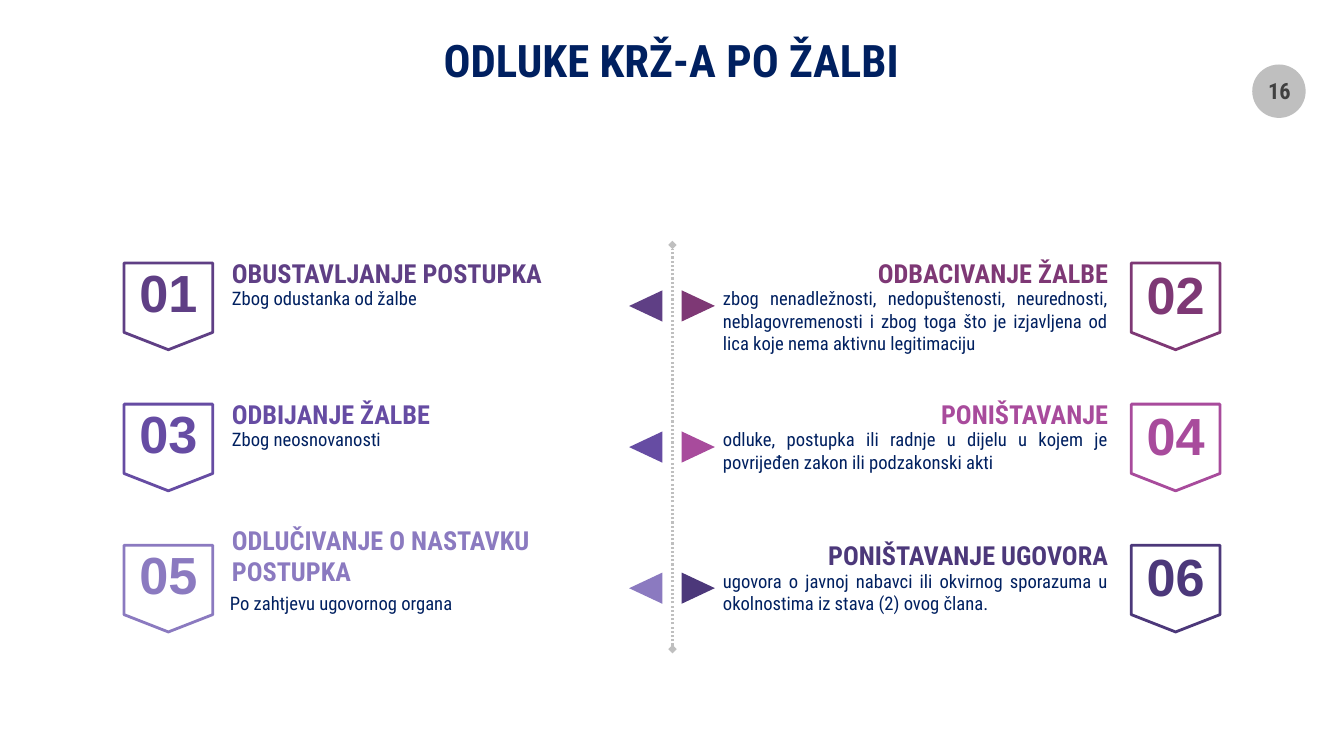
from lxml import etree
from pptx import Presentation
from pptx.dml.color import RGBColor
from pptx.enum import dml, shapes, text
from pptx.oxml.ns import qn
from pptx.util import Inches, Pt

TITLE = "ODLUKE KRŽ-A PO ŽALBI"
PAGE = "16"
NAVY = RGBColor(0x00, 0x20, 0x60)
GREY = RGBColor(0xBF, 0xBF, 0xBF)
DARK = RGBColor(0x40, 0x40, 0x40)
FONT = "Roboto Condensed"

# Heading, body, colour; items alternate between left and right
ITEMS = [
    ("OBUSTAVLJANJE POSTUPKA", "Zbog odustanka od žalbe",
     RGBColor(0x5F, 0x3F, 0x85)),
    ("ODBACIVANJE ŽALBE",
     "zbog nenadležnosti, nedopuštenosti, neurednosti, neblagovremenosti "
     "i zbog toga što je izjavljena od lica koje nema aktivnu legitimaciju",
     RGBColor(0x7E, 0x38, 0x75)),
    ("ODBIJANJE ŽALBE", "Zbog neosnovanosti", RGBColor(0x66, 0x4C, 0xA3)),
    ("PONIŠTAVANJE",
     "odluke, postupka ili radnje u dijelu u kojem je povrijeđen zakon "
     "ili podzakonski akti",
     RGBColor(0xA8, 0x4B, 0x9C)),
    ("ODLUČIVANJE O NASTAVKU\nPOSTUPKA", "Po zahtjevu ugovornog organa",
     RGBColor(0x8B, 0x7A, 0xC0)),
    ("PONIŠTAVANJE UGOVORA",
     "ugovora o javnoj nabavci ili okvirnog sporazuma u okolnostima "
     "iz stava (2) ovog člana.",
     RGBColor(0x4C, 0x38, 0x7A)),
]

TOP, STEP = 2.61, 1.4
WIDE, LINE = 3.82, 0.31
# Badge left, text left, arrow left, arrow turn, heading and body alignment
LEFT = (1.23, 2.3, 6.25, 270, text.PP_ALIGN.LEFT, text.PP_ALIGN.LEFT)
RIGHT = (11.22, 7.17, 6.77, 90, text.PP_ALIGN.RIGHT, text.PP_ALIGN.JUSTIFY)

prs = Presentation()
prs.slide_width, prs.slide_height = Inches(13.33), Inches(7.5)
slide = prs.slides.add_slide(prs.slide_layouts[6])


def write(shape, words, size, color, align, bold=True, font=FONT,
          anchor=text.MSO_ANCHOR.MIDDLE, base=0):
    frame = shape.text_frame
    frame.text = words
    frame.word_wrap = True
    frame.vertical_anchor = anchor
    frame.margin_left = frame.margin_right = frame.margin_top = 0
    frame.margin_bottom = Inches(base)
    for para in frame.paragraphs:
        para.alignment = align
        for run in para.runs:
            run.font.name, run.font.size = font, Pt(size)
            run.font.bold, run.font.color.rgb = bold, color


def label(x, y, w, h, *args, **style):
    box = slide.shapes.add_textbox(Inches(x), Inches(y), Inches(w), Inches(h))
    write(box, *args, **style)


def draw(kind, x, y, w, h, fill=None, line=None):
    shape = slide.shapes.add_shape(
        kind, Inches(x), Inches(y), Inches(w), Inches(h))
    shape.shadow.inherit = False
    if fill is None:
        shape.fill.background()
    else:
        shape.fill.solid()
        shape.fill.fore_color.rgb = fill
    if line is None:
        shape.line.fill.background()
    else:
        shape.line.color.rgb = line
        shape.line.width = Pt(2)
    return shape


def axis(x, low, high):
    """Dotted vertical divider with a diamond at each end."""
    rule = slide.shapes.add_connector(
        shapes.MSO_CONNECTOR.STRAIGHT,
        Inches(x), Inches(low), Inches(x), Inches(high))
    rule.line.color.rgb = GREY
    rule.line.width = Pt(1.5)
    rule.line.dash_style = dml.MSO_LINE.ROUND_DOT
    props = rule.line._get_or_add_ln()
    for end in ("a:headEnd", "a:tailEnd"):
        etree.SubElement(props, qn(end), type="diamond")
    etree.SubElement(rule._element.spPr, qn("a:effectLst"))


def entry(num, head, body, color):
    row, side = divmod(num, 2)
    badge, x, arrow, turn, halign, balign = RIGHT if side else LEFT
    y = TOP + row * STEP
    mark = draw(shapes.MSO_SHAPE.FLOWCHART_OFFPAGE_CONNECTOR,
                badge, y, 0.88, 0.86, line=color)
    write(mark, f"{num + 1:02}", 37.3, color, text.PP_ALIGN.CENTER,
          font="Arial", base=0.13)
    if side:
        mark.text_frame.margin_top = Inches(0.05)

    extra = head.count("\n")
    tall = LINE * (1 + extra)
    label(x, y + 0.1 - tall / 2, WIDE, tall, head, 18.7, color, halign)
    label(x - 0.02 * extra, y + 0.24 + 0.22 * extra, WIDE, 0.67, body, 13.3,
          NAVY, balign, bold=False, anchor=text.MSO_ANCHOR.TOP)

    tip = draw(shapes.MSO_SHAPE.ISOSCELES_TRIANGLE,
               arrow, y + 0.26, 0.31, 0.33, fill=color)
    tip.rotation = turn


draw(shapes.MSO_SHAPE.OVAL, 12.42, 0.64, 0.53, 0.53, fill=GREY)
label(12.38, 0.66, 0.62, 0.48, PAGE, 16, DARK, text.PP_ALIGN.CENTER)
label(3.19, 0.29, 6.94, 0.61, TITLE, 32, NAVY, text.PP_ALIGN.CENTER)
axis(6.67, 6.44, 2.43)
for num, item in enumerate(ITEMS):
    entry(num, *item)

prs.save("out.pptx")
